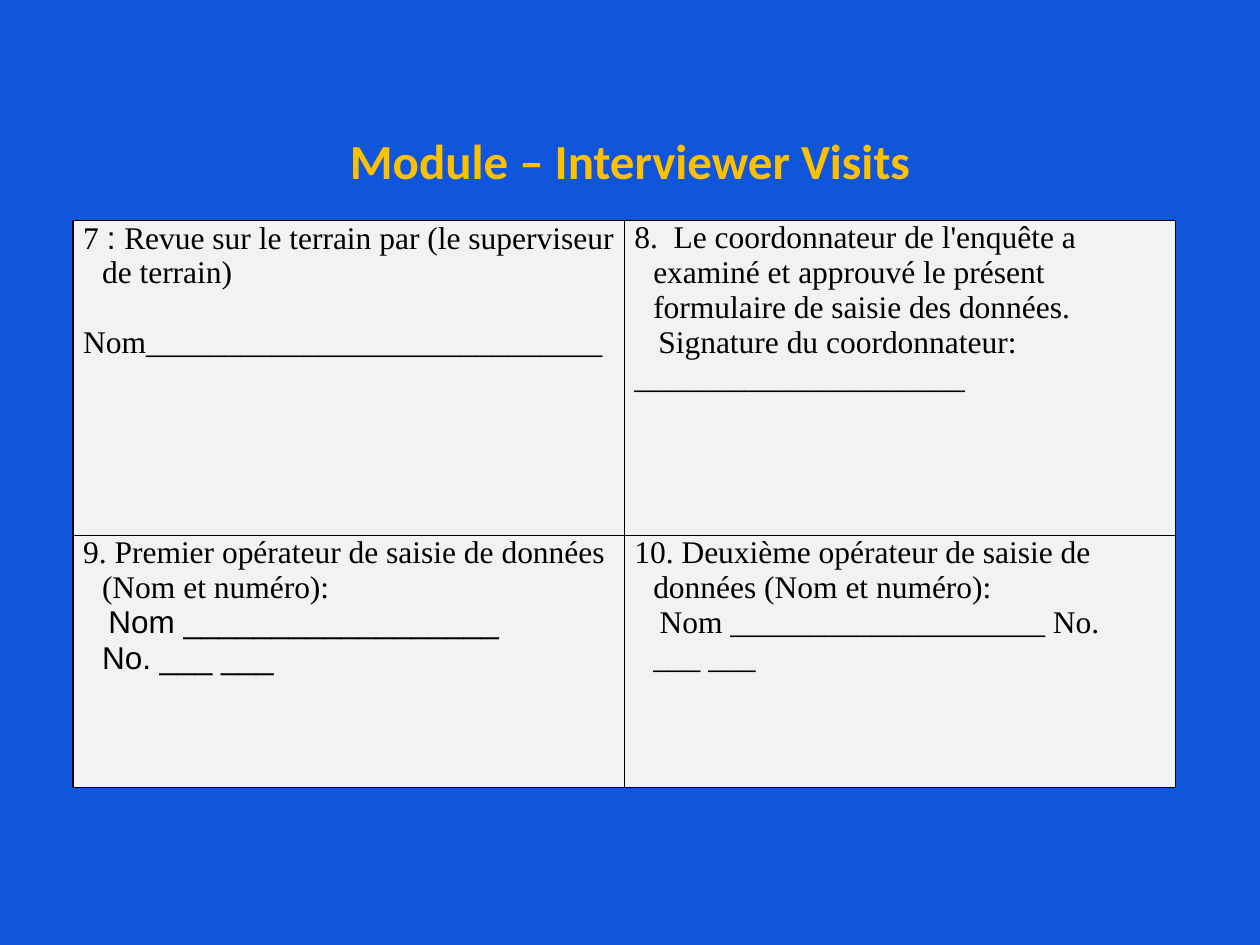
from lxml.etree import SubElement
from pptx import Presentation
from pptx.dml.color import RGBColor
from pptx.enum.text import MSO_ANCHOR, PP_ALIGN
from pptx.oxml.ns import qn
from pptx.util import Inches, Pt

BLUE = RGBColor(0x0F, 0x56, 0xDC)
GOLD = RGBColor(0xFF, 0xC0, 0x00)
PALE_GREY = RGBColor(0xF2, 0xF2, 0xF2)
BLACK = RGBColor(0, 0, 0)
SERIF, SANS = "Times New Roman", "Arial"

HANGING = (0.15, -0.15)
FLUSH = (0, 0)
FIRST_LINE = (0, 0.19)
ANSWER = (0.15, 0.05)

# Each paragraph: (left margin, first-line indent), space before in points, runs
FORM_ROWS = [
    [
        [
            (HANGING, 0, [("7 ", SERIF), (": ", SANS),
                          ("Revue sur le terrain par (le superviseur de terrain)", SERIF)]),
            (FLUSH, 20, [("Nom_____________________________", SERIF)]),
        ],
        [
            (HANGING, 0, [("8.  Le coordonnateur de l'enquête a examiné et approuvé "
                           "le présent formulaire de saisie des données.", SERIF)]),
            (FIRST_LINE, 0, [("Signature du coordonnateur: _____________________", SERIF)]),
        ],
    ],
    [
        [
            (HANGING, 0, [("9. Premier opérateur de saisie de données (Nom et numéro):", SERIF)]),
            (ANSWER, 0, [("Nom __________________", SANS), None, ("No. ___ ___", SANS)]),
        ],
        [
            (HANGING, 0, [("10. Deuxième opérateur de saisie de données (Nom et numéro):", SERIF)]),
            (ANSWER, 0, [("Nom ____________________ No.", SERIF), None, ("___ ___", SERIF)]),
        ],
    ],
]


def add_title(slide, left, top, width, height):
    title = slide.shapes.title
    title.left, title.top, title.width, title.height = left, top, width, height
    frame = title.text_frame
    frame.vertical_anchor = MSO_ANCHOR.BOTTOM
    heading = frame.paragraphs[0]
    heading.alignment = PP_ALIGN.CENTER
    heading.line_spacing = Pt(30)
    run = heading.add_run()
    run.text = "Module – Interviewer Visits"
    run.font.name, run.font.size, run.font.bold = "Calibri", Pt(28), True
    run.font.color.rgb = GOLD


def add_borders(cell):
    properties = cell._tc.get_or_add_tcPr()
    for position, side in enumerate(("lnL", "lnR", "lnT", "lnB")):
        line = SubElement(properties, qn(f"a:{side}"), w=str(Pt(1)))
        fill = SubElement(line, qn("a:solidFill"))
        SubElement(fill, qn("a:srgbClr"), val=str(BLACK))
        properties.insert(position, line)  # borders come before the fill


def write_paragraph(paragraph, indents, space_before, runs):
    margin, first_line = indents
    properties = paragraph._p.get_or_add_pPr()
    properties.set("marL", str(Inches(margin)))
    properties.set("indent", str(Inches(first_line)))
    paragraph.space_before = Pt(space_before)
    for part in runs:
        if part is None:
            paragraph.add_line_break()
            continue
        run = paragraph.add_run()
        run.text, run.font.name = part
        run.font.size = Pt(18)
        run.font.color.rgb = BLACK


def fill_cell(cell, paragraphs):
    cell.margin_left = cell.margin_right = Inches(0.08)
    cell.margin_top = cell.margin_bottom = 0
    cell.vertical_anchor = MSO_ANCHOR.TOP
    cell.fill.solid()
    cell.fill.fore_color.rgb = PALE_GREY
    add_borders(cell)
    frame = cell.text_frame
    for index, content in enumerate(paragraphs):
        paragraph = frame.add_paragraph() if index else frame.paragraphs[0]
        write_paragraph(paragraph, *content)


def add_form(slide, left, top, width, row_heights):
    form = slide.shapes.add_table(2, 2, left, top, width, sum(row_heights)).table
    form.first_row = form.horz_banding = False
    for row, height in zip(form.rows, row_heights):
        row.height = height
    for row, contents in zip(form.rows, FORM_ROWS):
        for cell, paragraphs in zip(row.cells, contents):
            fill_cell(cell, paragraphs)


def main():
    deck = Presentation()
    deck.slide_width, deck.slide_height = Inches(10), Inches(7.5)
    slide = deck.slides.add_slide(deck.slide_layouts[5])
    slide.background.fill.solid()
    slide.background.fill.fore_color.rgb = BLUE

    add_title(slide, Inches(0.5), Inches(0.3), Inches(9), Inches(1.25))
    add_form(slide, Inches(0.58), Inches(1.75), Inches(8.75), [Inches(2.5), Inches(2)])
    deck.save("out.pptx")


if __name__ == "__main__":
    main()
